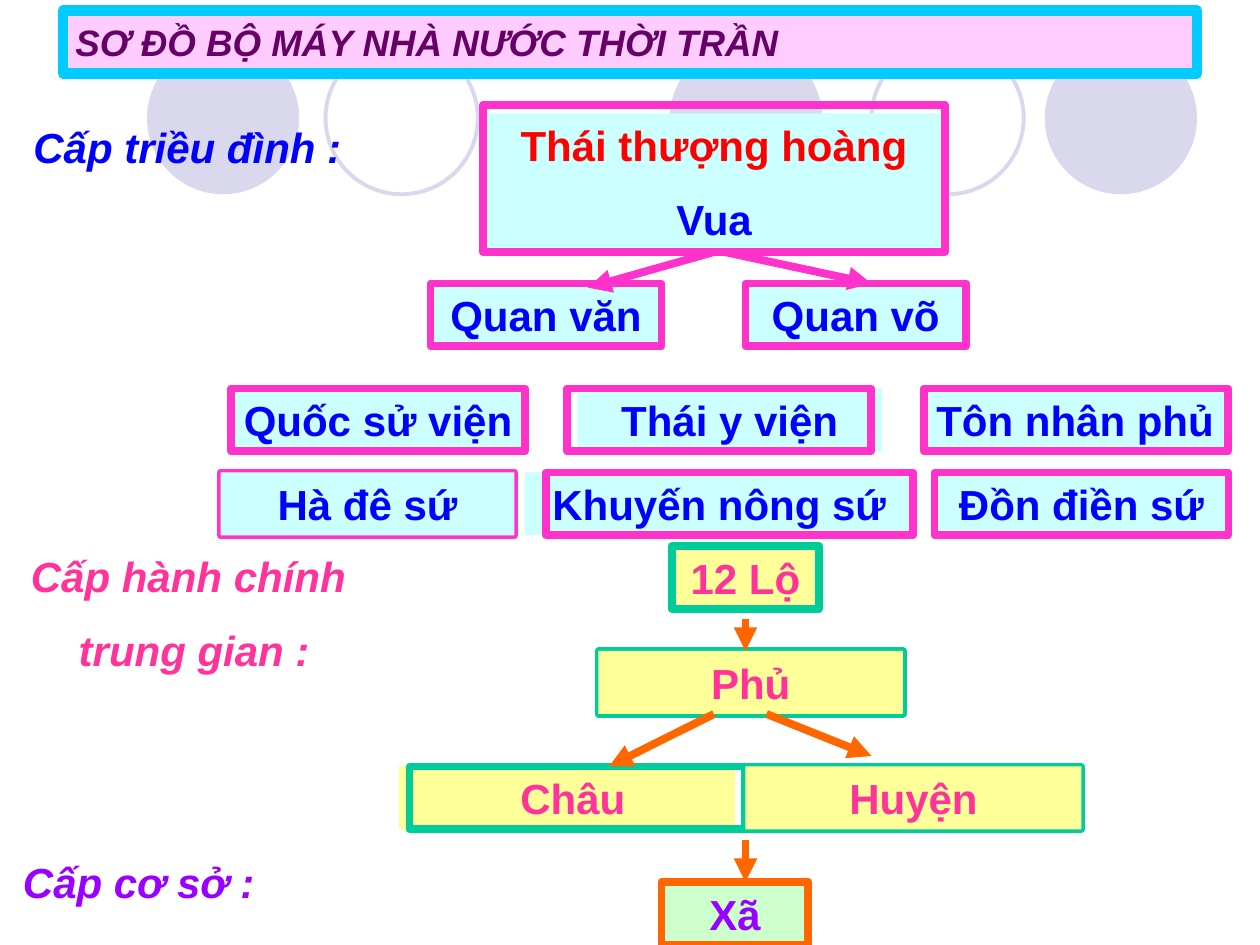
from dataclasses import dataclass

import pptx
import pptx.dml.color
import pptx.enum.shapes
import pptx.enum.text
import pptx.oxml
import pptx.oxml.ns
import pptx.util

SHAPES = pptx.enum.shapes.MSO_SHAPE
ALIGN = pptx.enum.text.PP_ALIGN
ANCHOR = pptx.enum.text.MSO_ANCHOR
FIT = pptx.enum.text.MSO_AUTO_SIZE

COLUMNS, ROWS = 120, 90
PINK, GREEN, ORANGE, LILAC = "FF33CC", "00CC99", "FF6600", "D9D8EC"
CYAN, YELLOW, MINT = "CCFFFF", "FFFF99", "CCFFCC"
BLUE, RED, ROSE, VIOLET = "0000FF", "FF0000", "FF3399", "9900FF"


@dataclass(frozen=True)
class Place:
    column: float
    row: float
    columns: float
    rows: float = 6


@dataclass(frozen=True)
class Panel:
    """A shape with optional fill, outline and lines of (text, colour)."""
    place: Place
    fill: str | None = None
    line: str | None = None
    width: float = 4.5
    lines: tuple[tuple[str, str], ...] = ()
    align: ALIGN = ALIGN.CENTER
    italic: bool = False
    size: float = 24
    anchor: ANCHOR = ANCHOR.TOP
    fit: FIT = FIT.SHAPE_TO_FIT_TEXT
    kind: SHAPES = SHAPES.RECTANGLE


@dataclass(frozen=True)
class Arrow:
    start: tuple[float, float]
    end: tuple[float, float]
    color: str = ORANGE


def circle(column: float, filled: bool) -> Panel:
    return Panel(Place(column, 4, 14.5, 14.5), LILAC if filled else None,
                 None if filled else LILAC, 2.25, kind=SHAPES.OVAL)


def office(place: Place, text: str, color: str = BLUE, fill: str = CYAN,
           align: ALIGN = ALIGN.CENTER) -> Panel:
    return Panel(place, fill, lines=((text, color),), align=align)


def frame(place: Place, color: str = PINK) -> Panel:
    return Panel(place, line=color)


def label(place: Place, color: str, *texts: str, align: ALIGN = ALIGN.LEFT) -> Panel:
    return Panel(place, lines=tuple((text, color) for text in texts), align=align, italic=True)


CIVIL, MILITARY = Place(41, 27, 22), Place(71, 27, 21)
HISTORY, CLAN = Place(22, 37, 28), Place(88, 37, 29)
DIKES, PLANTATIONS = Place(21, 45, 28), Place(89, 45, 28)
PROVINCE, PREFECTURE = Place(64, 52, 14), Place(57, 62, 29)
DISTRICT, COMMUNE = Place(71, 73, 32), Place(63, 84, 14)

# From back to front: frames drawn before their fill show only their outer half.
LAYERS: tuple[Panel | Arrow, ...] = (
    circle(63.8, True), circle(99.5, True), circle(14, True),
    circle(83, False), circle(31, False),
    Panel(Place(6, 1, 108), "FFCCFF", "00CCFF", 6,
          (("SƠ ĐỒ BỘ MÁY NHÀ NƯỚC THỜI TRẦN", "660066"),),
          ALIGN.LEFT, True, 21, ANCHOR.MIDDLE, FIT.NONE),
    Panel(Place(46, 10.8, 44, 13.3), CYAN, lines=(("Thái thượng hoàng", RED), ("Vua", BLUE))),
    office(CIVIL, "Quan văn"),
    office(MILITARY, "Quan võ"),
    office(Place(38, 73, 32), " Châu", ROSE, YELLOW),
    office(PROVINCE, "12 Lộ", ROSE, YELLOW),
    office(COMMUNE, "Xã", VIOLET, MINT),
    label(Place(2, 11, 32), BLUE, "Cấp triều đình :"),
    label(Place(0, 51.8, 37, 13.3), ROSE, "Cấp hành chính ", "trung gian :", align=ALIGN.CENTER),
    label(Place(1, 81, 26), VIOLET, "Cấp cơ sở :"),
    office(HISTORY, "Quốc sử viện"),
    office(Place(55, 37, 29), "Thái y viện"),
    office(CLAN, "Tôn nhân phủ", align=ALIGN.LEFT),
    frame(Place(46, 10, 44, 14)),
    frame(MILITARY), frame(CIVIL), frame(HISTORY),
    frame(Place(54, 37, 29)), frame(CLAN),
    frame(PREFECTURE, GREEN), frame(PROVINCE, GREEN),
    frame(COMMUNE, ORANGE),
    frame(Place(39, 73, 32), GREEN), frame(DISTRICT, GREEN),
    office(PREFECTURE, "Phủ", ROSE, YELLOW),
    office(DISTRICT, "Huyện", ROSE, YELLOW),
    Arrow((71, 59), (71, 62)),
    Arrow((68, 24), (56, 27.4), PINK),
    Arrow((69, 24), (83, 27), PINK),
    frame(DIKES),
    office(DIKES, "Hà đê sứ"),
    office(Place(50, 45, 37), "Khuyến nông sứ"),
    office(PLANTATIONS, "Đồn điền sứ"),
    frame(PLANTATIONS), frame(Place(52, 45, 35)),
    Arrow((68, 68), (58, 73)),
    Arrow((73, 68), (83, 72)),
    Arrow((71, 80), (71, 84)),
)

deck = pptx.Presentation()
deck.slide_width, deck.slide_height = pptx.util.Inches(10), pptx.util.Inches(7.5)


def across(columns: float) -> int:
    return round(deck.slide_width * columns / COLUMNS)


def down(rows: float) -> int:
    return round(deck.slide_height * rows / ROWS)


def rgb(color: str) -> pptx.dml.color.RGBColor:
    return pptx.dml.color.RGBColor.from_string(color)


def set_values(target: object, values: dict[str, object]) -> None:
    for name, value in values.items():
        setattr(target, name, value)


def paint_line(line, color: str, width: float) -> None:
    line.color.rgb = rgb(color)
    line.width = pptx.util.Pt(width)


def write_lines(text_frame, panel: Panel) -> None:
    set_values(text_frame, {"word_wrap": True, "auto_size": panel.fit,
                            "vertical_anchor": panel.anchor})
    for index, (text, color) in enumerate(panel.lines):
        para = text_frame.add_paragraph() if index else text_frame.paragraphs[0]
        para.alignment = panel.align
        if index:
            para.space_before = pptx.util.Pt(13.5)
        span = para.add_run()
        span.text = text
        set_values(span.font, {"name": "Arial", "size": pptx.util.Pt(panel.size),
                               "bold": True, "italic": panel.italic})
        span.font.color.rgb = rgb(color)


def draw_panel(page, panel: Panel) -> None:
    place = panel.place
    bounds = (across(place.column), down(place.row), across(place.columns), down(place.rows))
    if panel.fill or panel.line:
        box = page.shapes.add_shape(panel.kind, *bounds)
        box.shadow.inherit = False
        if panel.fill:
            box.fill.solid()
            box.fill.fore_color.rgb = rgb(panel.fill)
        else:
            box.fill.background()
        if panel.line:
            paint_line(box.line, panel.line, panel.width)
        else:
            box.line.fill.background()
    else:
        box = page.shapes.add_textbox(*bounds)
    if panel.lines:
        write_lines(box.text_frame, panel)


def draw_arrow(page, arrow: Arrow) -> None:
    (start_column, start_row), (end_column, end_row) = arrow.start, arrow.end
    connector = page.shapes.add_connector(
        pptx.enum.shapes.MSO_CONNECTOR.STRAIGHT,
        across(start_column), down(start_row), across(end_column), down(end_row))
    paint_line(connector.line, arrow.color, 4.5)
    namespace = pptx.oxml.ns.nsdecls("a")
    head = pptx.oxml.parse_xml(f'<a:tailEnd {namespace} type="triangle"/>')
    connector.line._get_or_add_ln().append(head)
    connector._element.spPr.append(pptx.oxml.parse_xml(f"<a:effectLst {namespace}/>"))


def main() -> None:
    page = deck.slides.add_slide(deck.slide_layouts[6])
    for layer in LAYERS:
        if isinstance(layer, Arrow):
            draw_arrow(page, layer)
        else:
            draw_panel(page, layer)
    deck.save("out.pptx")


if __name__ == "__main__":
    main()
